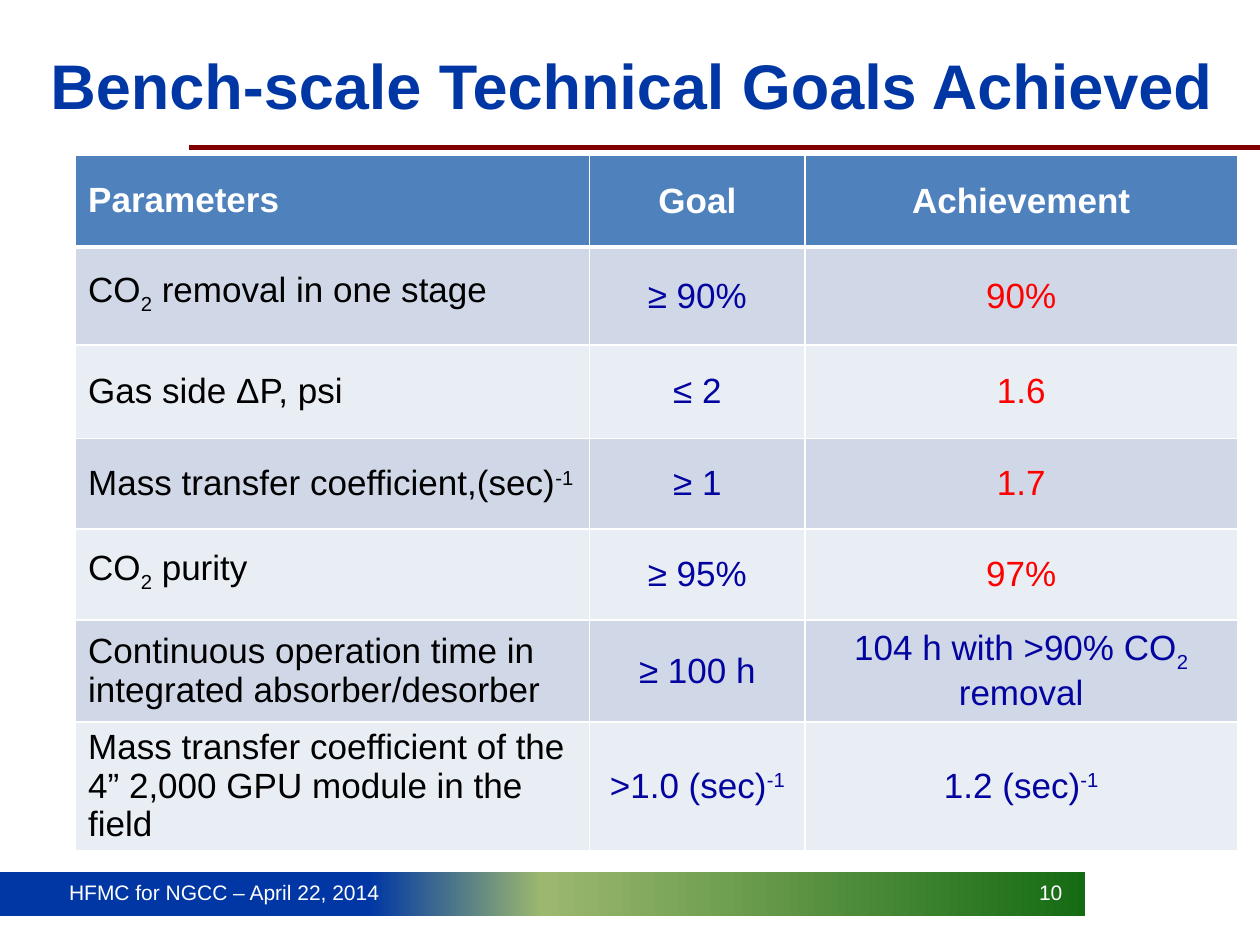
from lxml.etree import SubElement
from pptx import Presentation
from pptx.dml.color import RGBColor as Rgb
from pptx.enum.shapes import MSO_CONNECTOR as Connector, MSO_SHAPE as Shape
from pptx.enum.text import MSO_ANCHOR as Anchor, PP_ALIGN as Align
from pptx.oxml import parse_xml
from pptx.oxml.ns import nsdecls, qn
from pptx.util import Inches, Pt

WIDTH, HEIGHT = 10, 7.5
FONT = "Arial"
COLORS = {
    "title": "0037A4", "rule": "800000", "white": "FFFFFF", "black": "000000",
    "goal": "03039F", "met": "FF0000", "header": "4F81BD",
    "odd": "D0D8E8", "even": "E9EDF4",
    "bar_mid": "9CB86E", "bar_end": "156B13",
}
BAR_STOPS = [(34, "title"), (50, "bar_mid"), (100, "bar_end")]
SUB, SUPER = -25, 30
COLUMNS = [4.08, 1.71, 3.43]
ROWS = [0.73, 0.78, 0.74] + [0.72] * 4
HEADER = ["Parameters", "Goal", "Achievement"]
RESULTS = [
    (["CO", ("2", SUB), " removal in one stage"], ["≥ 90%"], ["90%"], "met"),
    (["Gas side ΔP, psi"], ["≤ 2"], ["1.6"], "met"),
    (["Mass transfer coefficient,(sec)", ("-1", SUPER)], ["≥ 1"], ["1.7"], "met"),
    (["CO", ("2", SUB), " purity"], ["≥ 95%"], ["97%"], "met"),
    (["Continuous operation time in integrated absorber/desorber"],
     ["≥ 100 h"], ["104 h with >90% CO", ("2", SUB), " removal"], "goal"),
    (["Mass transfer coefficient of the 4” 2,000 GPU module in the field"],
     [">1.0 (sec)", ("-1", SUPER)], ["1.2 (sec)", ("-1", SUPER)], "goal"),
]


def color(name):
    """Return the named colour."""
    return Rgb.from_string(COLORS[name])


def box(left, top, width, height):
    """Turn shares of the slide into a position and size."""
    return [Inches(share * side) for share, side
            in zip((left, top, width, height), (WIDTH, HEIGHT) * 2)]


def write(paragraph, parts, size, color_name, bold=False, align=Align.LEFT):
    """Add runs to a paragraph, raised or lowered where a part says so."""
    paragraph.alignment = align
    for part in parts:
        text, baseline = (part, 0) if isinstance(part, str) else part
        run = paragraph.add_run()
        run.text = text
        font = run.font
        font.name, font.size, font.bold = FONT, Pt(size), bold
        font.color.rgb = color(color_name)
        if baseline:
            font._element.set("baseline", str(baseline * 1000))


def add_title(slide, text):
    """Place and fill the title placeholder."""
    title = slide.shapes.title
    title.left, title.top, title.width, title.height = box(0.03, 0.01, 0.954, 0.167)
    frame = title.text_frame
    frame.vertical_anchor = Anchor.MIDDLE
    frame.paragraphs[0].line_spacing = Pt(38)
    write(frame.paragraphs[0], [text], 36, "title", bold=True)


def add_rule(slide):
    """Draw the line under the title."""
    left, top, width, _ = box(0.15, 0.156, 1, 0)
    rule = slide.shapes.add_connector(Connector.STRAIGHT, left, top, width, top)
    rule.line.color.rgb = color("rule")
    rule.line.width = Pt(3)
    SubElement(rule._element.spPr, qn("a:effectLst"))


def add_bar(slide):
    """Draw the footer band with its three-stop gradient."""
    bar = slide.shapes.add_shape(Shape.RECTANGLE, *box(0, 0.923, 0.861, 0.046))
    bar.shadow.inherit = False
    bar.line.fill.background()
    stops = "".join(f'<a:gs pos="{place * 1000}"><a:srgbClr val="{COLORS[name]}"/></a:gs>'
                    for place, name in BAR_STOPS)
    gradient = parse_xml(f'<a:gradFill {nsdecls("a")} rotWithShape="1"><a:gsLst>{stops}'
                         '</a:gsLst><a:lin ang="0" scaled="0"/></a:gradFill>')
    bar._element.spPr.find(qn("a:prstGeom")).addnext(gradient)


def add_footer_text(slide, text, left, width, align):
    """Add a small white text on the footer band."""
    frame = slide.shapes.add_textbox(*box(left, 0.924, width, 0.054)).text_frame
    frame.word_wrap = True
    write(frame.paragraphs[0], [text], 12, "white", align=align)


def set_borders(cell, top, bottom):
    """Give a cell white borders, with widths in points for top and bottom."""
    properties = cell._tc.get_or_add_tcPr()
    for side, width in (("L", 1), ("R", 1), ("T", top), ("B", bottom)):
        line = SubElement(properties, qn(f"a:ln{side}"), w=str(Pt(width)))
        fill = SubElement(line, qn("a:solidFill"))
        SubElement(fill, qn("a:srgbClr"), val=COLORS["white"])


def add_results_table(slide):
    """Build the table of goals and achievements."""
    table = slide.shapes.add_table(
        len(ROWS), len(COLUMNS), Inches(0.6), Inches(1.23),
        Inches(sum(COLUMNS)), Inches(sum(ROWS))).table
    for column, width in zip(table.columns, COLUMNS):
        column.width = Inches(width)
    for row, height in zip(table.rows, ROWS):
        row.height = Inches(height)
    content = [([[text] for text in HEADER], ["white"] * 3)]
    content += [(cells, ["black", "goal", last]) for *cells, last in RESULTS]
    for row, (cells, text_colors) in enumerate(content):
        is_header = row == 0
        fill = "header" if is_header else ("even", "odd")[row % 2]
        for column, (parts, text_color) in enumerate(zip(cells, text_colors)):
            cell = table.cell(row, column)
            set_borders(cell, 3 if row == 1 else 1, 3 if is_header else 1)
            cell.fill.solid()
            cell.fill.fore_color.rgb = color(fill)
            cell.vertical_anchor = Anchor.MIDDLE
            paragraph = cell.text_frame.paragraphs[0]
            if column == 0:
                paragraph.line_spacing = Pt(22)
            write(paragraph, parts, 20, text_color, is_header,
                  Align.CENTER if column else Align.LEFT)


def main():
    """Build and save the slide."""
    presentation = Presentation()
    presentation.slide_width, presentation.slide_height = Inches(WIDTH), Inches(HEIGHT)
    slide = presentation.slides.add_slide(presentation.slide_layouts[5])
    add_bar(slide)
    add_rule(slide)
    add_footer_text(slide, "10", 0.62, 0.233, Align.RIGHT)
    add_footer_text(slide, "HFMC for NGCC – April 22, 2014", 0.045, 0.771, Align.LEFT)
    add_title(slide, "Bench-scale Technical Goals Achieved")
    add_results_table(slide)
    presentation.save("out.pptx")


if __name__ == "__main__":
    main()
